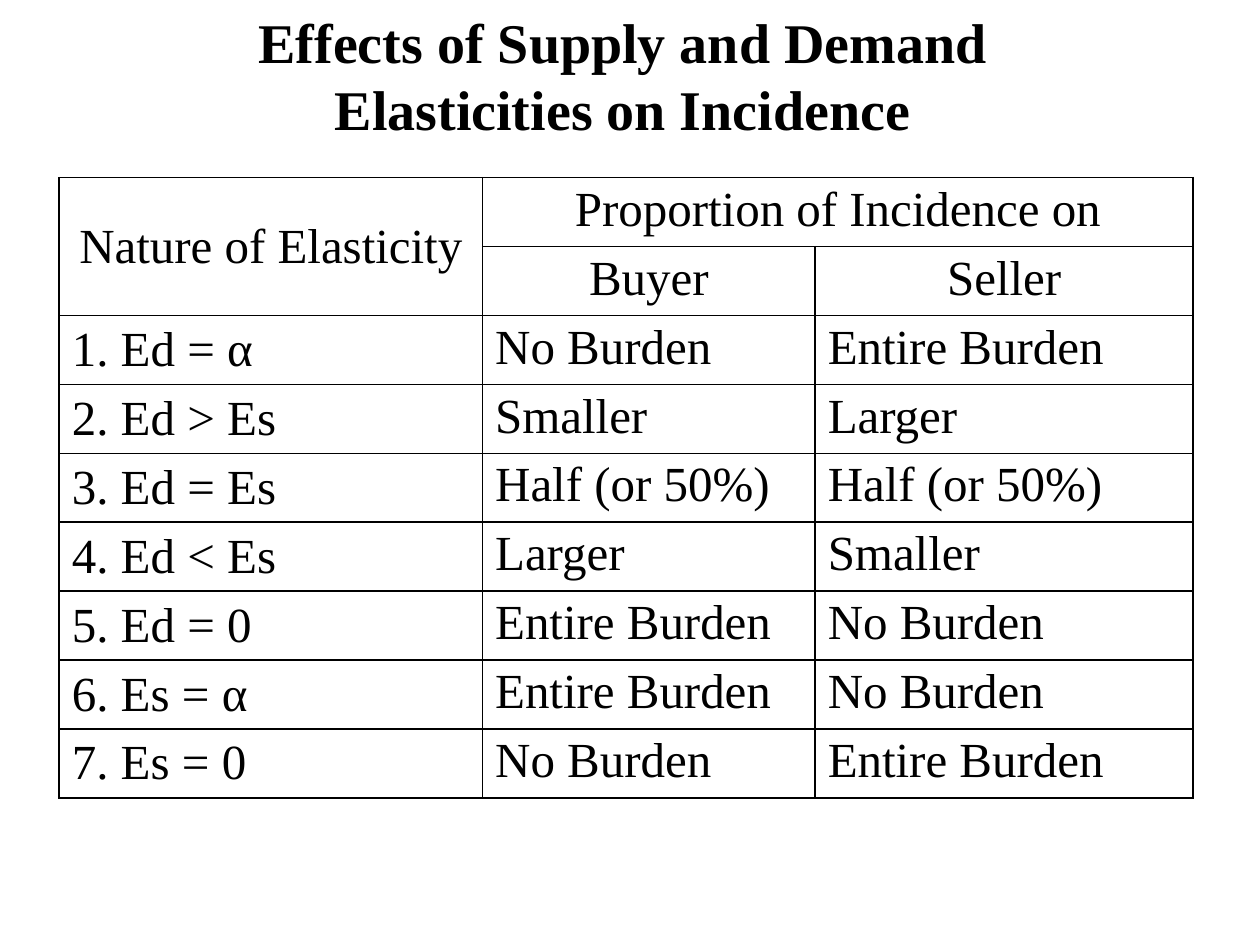
"""Build a slide with a table of tax incidence by supply and demand elasticity."""
from lxml.etree import SubElement
from pptx import Presentation
from pptx.dml.color import RGBColor
from pptx.enum.text import MSO_ANCHOR, PP_ALIGN
from pptx.oxml.ns import qn
from pptx.util import Inches, Pt

TITLE = "Effects of Supply and Demand \vElasticities on Incidence "
ROWS = [
    ("Nature of Elasticity", "Proportion of Incidence on", ""),
    ("", "Buyer", "Seller"),
    ("1. Ed = α", "No Burden ", "Entire Burden"),
    ("2. Ed > Es", "Smaller", "Larger"),
    ("3. Ed = Es", "Half (or 50%)", "Half (or 50%)"),
    ("4. Ed < Es", "Larger", "Smaller"),
    ("5. Ed = 0", "Entire Burden", "No Burden"),
    ("6. Es = α", "Entire Burden", "No Burden"),
    ("7. Es = 0", "No Burden ", "Entire Burden"),
]
HEADER_ROWS = 2
COL_WIDTHS = (3.36, 2.64, 3)
ROW_HEIGHT = 0.53
COLORS = {"text": "000000", "border": "000000"}
FONT = "Times New Roman"


def write(tf, text, size, align, bold=False):
    tf.text = text
    for p in tf.paragraphs:
        p.alignment = align
        for r in p.runs:
            r.font.name = FONT
            r.font.size = Pt(size)
            r.font.bold = bold
            r.font.color.rgb = RGBColor.from_string(COLORS["text"])


def add_borders(cell):
    tc_pr = cell._tc.get_or_add_tcPr()
    for side in ("a:lnL", "a:lnR", "a:lnT", "a:lnB"):
        line = SubElement(tc_pr, qn(side), w=str(Pt(1)))
        fill = SubElement(line, qn("a:solidFill"))
        SubElement(fill, qn("a:srgbClr"), val=COLORS["border"])


def add_title(s):
    sp = s.shapes.add_textbox(Inches(0.5), Inches(0.16), Inches(9), Inches(0.86))
    tf = sp.text_frame
    tf.word_wrap = True
    tf.vertical_anchor = MSO_ANCHOR.MIDDLE
    write(tf, TITLE, 32, PP_ALIGN.CENTER, bold=True)


def add_incidence_table(s):
    frame = s.shapes.add_table(
        len(ROWS), len(COL_WIDTHS), Inches(0.47), Inches(1.41),
        Inches(sum(COL_WIDTHS)), Inches(ROW_HEIGHT * len(ROWS)))
    table = frame.table
    table.first_row = table.horz_banding = False
    for column, width in zip(table.columns, COL_WIDTHS):
        column.width = Inches(width)
    for i, row in enumerate(ROWS):
        table.rows[i].height = Inches(ROW_HEIGHT)
        for j, text in enumerate(row):
            cell = table.cell(i, j)
            align = PP_ALIGN.CENTER if i < HEADER_ROWS else PP_ALIGN.JUSTIFY
            write(cell.text_frame, text, 28, align)
            cell.margin_top = cell.margin_bottom = Inches(0.04)
            cell.vertical_anchor = MSO_ANCHOR.TOP if j else MSO_ANCHOR.MIDDLE
            add_borders(cell)
            cell.fill.background()
    table.cell(0, 0).merge(table.cell(1, 0))
    table.cell(0, 1).merge(table.cell(0, 2))


def main():
    prs = Presentation()
    prs.slide_width, prs.slide_height = Inches(10), Inches(7.5)
    s = prs.slides.add_slide(prs.slide_layouts[6])
    add_title(s)
    add_incidence_table(s)
    prs.save("out.pptx")


if __name__ == "__main__":
    main()
